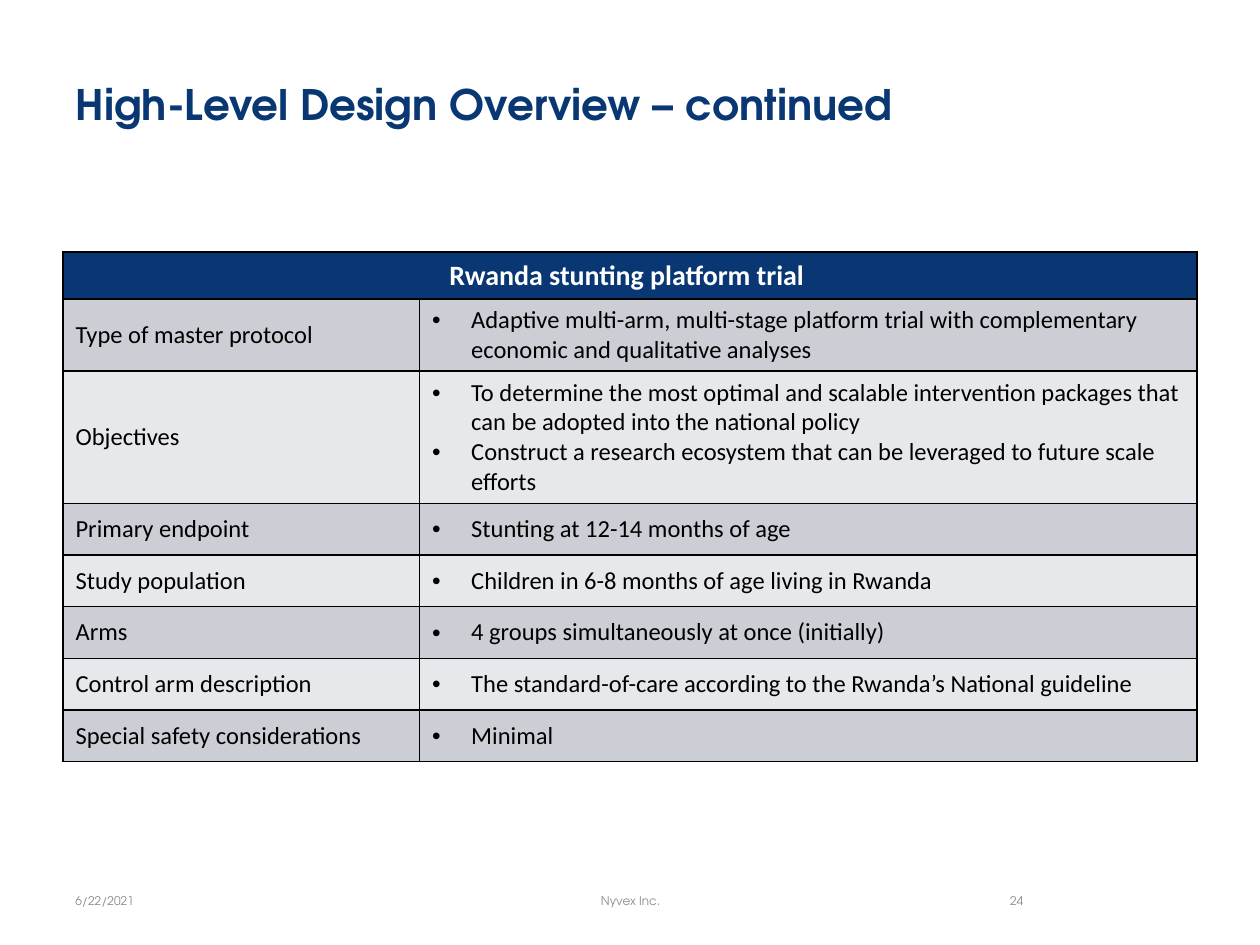
from dataclasses import dataclass

from lxml.etree import SubElement
from pptx import Presentation
from pptx.dml.color import RGBColor
from pptx.enum.text import MSO_ANCHOR, PP_ALIGN
from pptx.oxml.ns import qn
from pptx.util import Inches, Pt


@dataclass(frozen=True)
class Theme:
    heading_font: str = "TeX Gyre Adventor"
    body_font: str = "Calibri"
    navy: str = "083773"
    white: str = "FFFFFF"
    black: str = "000000"
    footer_gray: str = "898989"
    footer_center_gray: str = "8C8C8C"
    bands: tuple = ("CCCED5", "E7E8EB")
    title_size: float = 24
    header_size: float = 16
    body_size: float = 14
    footer_size: float = 6.8
    border_width: float = 1


THEME = Theme()

TABLE_HEADER = "Rwanda stunting platform trial "
# Label, bullets, row height in inches
DESIGN_ROWS = [
    ("Type of master protocol",
     ["Adaptive multi-arm, multi-stage platform trial with complementary "
      "economic and qualitative analyses"], 0.57),
    ("Objectives",
     ["To determine the most optimal and scalable intervention packages that "
      "can be adopted into the national policy",
      "Construct a research ecosystem that can be leveraged to future scale efforts"], 1.05),
    ("Primary endpoint", ["Stunting at 12-14 months of age"], 0.41),
    ("Study population", ["Children in 6-8 months of age living in Rwanda"], 0.41),
    ("Arms", ["4 groups simultaneously at once (initially)"], 0.41),
    ("Control arm description",
     ["The standard-of-care according to the Rwanda’s National guideline"], 0.41),
    ("Special safety considerations", ["Minimal"], 0.41),
]


def style(para, font, size, color, bold=False, align=PP_ALIGN.LEFT):
    para.alignment = align
    para.font.name = font
    para.font.size = Pt(size)
    para.font.bold = bold
    para.font.color.rgb = RGBColor.from_string(color)


def place(shape, left, top, width, height):
    shape.left, shape.top = Inches(left), Inches(top)
    shape.width, shape.height = Inches(width), Inches(height)


def add_title(page, text, left, top, width, height):
    title = page.shapes.title
    place(title, left, top, width, height)
    frame = title.text_frame
    frame.text = text
    frame.vertical_anchor = MSO_ANCHOR.MIDDLE
    style(frame.paragraphs[0], THEME.heading_font, THEME.title_size, THEME.navy, bold=True)


def add_bullet(para, indent=0.31):
    properties = para._p.get_or_add_pPr()
    properties.set("marL", str(Inches(indent)))
    properties.set("indent", str(-Inches(indent)))
    SubElement(properties, qn("a:buFont"), typeface="Arial")
    SubElement(properties, qn("a:buChar"), char="•")


def format_cell(cell, fill):
    cell.vertical_anchor = MSO_ANCHOR.MIDDLE
    properties = cell._tc.get_or_add_tcPr()
    for side in ("a:lnL", "a:lnR", "a:lnT", "a:lnB"):
        line = SubElement(properties, qn(side), w=str(Pt(THEME.border_width)))
        SubElement(SubElement(line, qn("a:solidFill")), qn("a:srgbClr"), val=THEME.black)
    cell.fill.solid()
    cell.fill.fore_color.rgb = RGBColor.from_string(fill)


def fill_cell(cell, lines, bulleted=False):
    frame = cell.text_frame
    frame.text = "\n".join(lines)
    for para in frame.paragraphs:
        if bulleted:
            add_bullet(para)
        style(para, THEME.body_font, THEME.body_size, THEME.black)


def add_design_table(page, left, top, width, label_width=2.83, header_height=0.37):
    heights = [header_height] + [height for _, _, height in DESIGN_ROWS]
    table = page.shapes.add_table(
        len(heights), 2, Inches(left), Inches(top), Inches(width), Inches(sum(heights))
    ).table
    for column, column_width in zip(table.columns, (label_width, width - label_width)):
        column.width = Inches(column_width)
    for row, height in zip(table.rows, heights):
        row.height = Inches(height)

    # Header across both columns
    header = table.cell(0, 0)
    header.merge(table.cell(0, 1))
    for cell in table.rows[0].cells:
        format_cell(cell, THEME.navy)
    header.text_frame.text = TABLE_HEADER
    style(header.text_frame.paragraphs[0], THEME.body_font, THEME.header_size,
          THEME.white, bold=True, align=PP_ALIGN.CENTER)

    # Banded body rows
    for index, (label, bullets, _) in enumerate(DESIGN_ROWS):
        label_cell, detail_cell = table.rows[index + 1].cells
        for cell in (label_cell, detail_cell):
            format_cell(cell, THEME.bands[index % 2])
        fill_cell(label_cell, [label])
        fill_cell(detail_cell, bullets, bulleted=True)


def add_footer(page, top, height):
    parts = [
        ("6/22/2021", 0.5, 2.33, PP_ALIGN.LEFT, THEME.footer_gray),
        ("Nyvex Inc.", 3.42, 3.17, PP_ALIGN.CENTER, THEME.footer_center_gray),
        ("24", 7.17, 1.05, PP_ALIGN.RIGHT, THEME.footer_gray),
    ]
    for text, left, width, align, color in parts:
        box = page.shapes.add_textbox(Inches(left), Inches(top), Inches(width), Inches(height))
        frame = box.text_frame
        frame.word_wrap = True
        frame.vertical_anchor = MSO_ANCHOR.MIDDLE
        frame.text = text
        style(frame.paragraphs[0], THEME.heading_font, THEME.footer_size, color, align=align)


def main():
    deck = Presentation()
    deck.slide_width, deck.slide_height = Inches(10), Inches(7.5)
    page = deck.slides.add_slide(deck.slide_layouts.get_by_name("Title Only"))
    add_title(page, "High-Level Design Overview – continued", 0.5, 0.3, 9, 1.04)
    add_design_table(page, 0.5, 2, 9)
    add_footer(page, 6.95, 0.4)
    deck.save("out.pptx")


if __name__ == "__main__":
    main()
